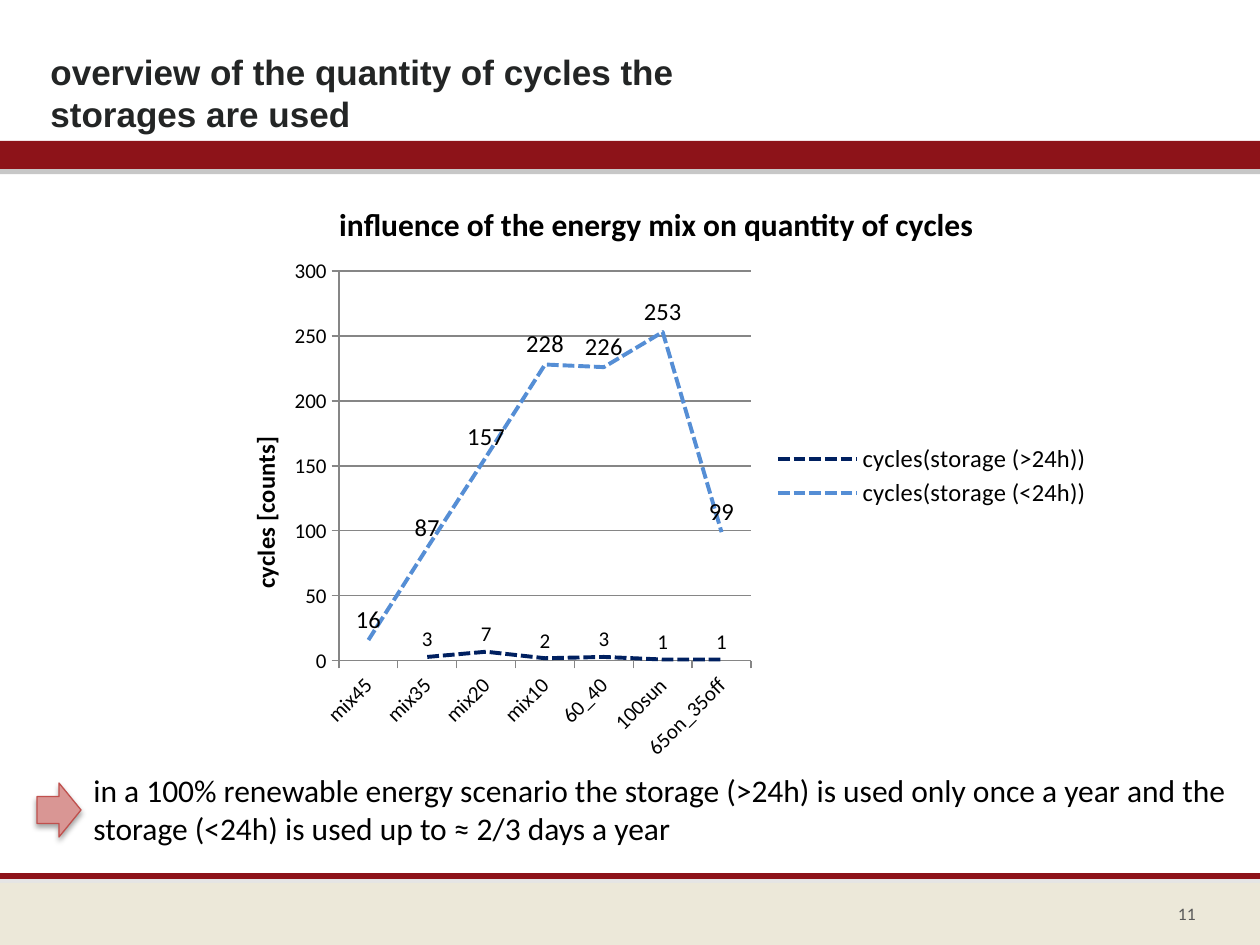
from dataclasses import dataclass

from lxml import etree
from pptx import Presentation
from pptx.chart.data import CategoryChartData
from pptx.dml.color import RGBColor
from pptx.enum.chart import XL_CHART_TYPE, XL_LABEL_POSITION, XL_LEGEND_POSITION, XL_MARKER_STYLE, XL_TICK_MARK
from pptx.enum.dml import MSO_LINE
from pptx.enum.shapes import MSO_SHAPE
from pptx.enum.text import MSO_ANCHOR, PP_ALIGN
from pptx.oxml import parse_xml
from pptx.oxml.ns import nsdecls, qn
from pptx.util import Emu, Pt

PX = 914400 / 126

RECTANGLE, RIGHT_ARROW = MSO_SHAPE.RECTANGLE, MSO_SHAPE.RIGHT_ARROW
TOP, MIDDLE = MSO_ANCHOR.TOP, MSO_ANCHOR.MIDDLE
LEFT, RIGHT = PP_ALIGN.LEFT, PP_ALIGN.RIGHT
OUTSIDE = XL_TICK_MARK.OUTSIDE

BLACK = RGBColor(0x00, 0x00, 0x00)
TITLE_INK = RGBColor(0x23, 0x25, 0x25)
NUMBER_GREY = RGBColor(0x59, 0x59, 0x59)
AXIS_GREY = RGBColor(0x86, 0x86, 0x86)
SHADOW_GREY = RGBColor(0x80, 0x80, 0x80)
RED = RGBColor(0x8D, 0x13, 0x19)
BEIGE = RGBColor(0xEC, 0xE8, 0xD9)
PINK = RGBColor(0xD9, 0x96, 0x94)
ARROW_EDGE = RGBColor(0xC0, 0x50, 0x4D)
NAVY = RGBColor(0x00, 0x20, 0x60)
BLUE = RGBColor(0x55, 0x8E, 0xD5)


@dataclass(frozen=True)
class Box:
    left: int
    top: int
    width: int
    height: int

    def emu(self) -> tuple[Emu, ...]:
        return tuple(Emu(round(length * PX)) for length in (self.left, self.top, self.width, self.height))


@dataclass(frozen=True)
class Shadow:
    color: RGBColor
    opacity: int
    blur: float
    distance: float
    angle: int


@dataclass(frozen=True)
class Block:
    box: Box
    fill: RGBColor
    shadow: Shadow | None = None
    preset: int = RECTANGLE
    edge: RGBColor | None = None


@dataclass(frozen=True)
class Label:
    box: Box
    lines: tuple[str, ...]
    size: int
    color: RGBColor = BLACK
    font: str = "Calibri"
    bold: bool = False
    align: int = LEFT
    anchor: int = MIDDLE
    wrap: bool = True


@dataclass(frozen=True)
class Series:
    name: str
    values: tuple[int | None, ...]
    color: RGBColor
    label_size: int


BLOCKS = (
    Block(Box(0, 883, 1260, 62), BEIGE, Shadow(SHADOW_GREY, 20, 0, 3, 270)),
    Block(Box(0, 873, 1260, 6), RED),
    Block(Box(0, 141, 1260, 28), RED, Shadow(SHADOW_GREY, 43, 0, 3, 90)),
    Block(Box(37, 783, 44, 54), PINK, Shadow(BLACK, 35, 3.1, 1.8, 90), RIGHT_ARROW, ARROW_EDGE),
)
LABELS = (
    Label(Box(38, 27, 727, 131), ("overview of the quantity of cycles the storages are used",),
          20, TITLE_INK, "Arial", bold=True),
    Label(Box(81, 765, 1173, 89),
          ("in a 100% renewable energy scenario the storage (>24h) is used only once a year and the",
           "storage (<24h) is used up to ≈ 2/3 days a year"), 18, anchor=TOP, wrap=False),
    Label(Box(1071, 857, 137, 113), ("11",), 10, NUMBER_GREY, align=RIGHT),
)
CHART_BOX = Box(210, 178, 893, 595)
PLOT_BOX = Box(339, 271, 412, 390)
LEGEND_BOX = Box(772, 440, 320, 72)
AXIS_TITLE_BOX = Box(244, 432, 26, 156)
CATEGORIES = ("mix45", "mix35", "mix20", "mix10", "60_40", "100sun", "65on_35off")
SERIES = (
    Series("cycles(storage (>24h))", (None, 3, 7, 2, 3, 1, 1), NAVY, 12),
    Series("cycles(storage (<24h))", (16, 87, 157, 228, 226, 253, 99), BLUE, 14),
)


def add_shadow(shape, shadow: Shadow) -> None:
    shape._element.spPr.append(parse_xml(
        f'<a:effectLst {nsdecls("a")}><a:outerShdw blurRad="{Pt(shadow.blur)}" dist="{Pt(shadow.distance)}"'
        f' dir="{shadow.angle * 60000}" algn="ctr" rotWithShape="0"><a:srgbClr val="{shadow.color}">'
        f'<a:alpha val="{shadow.opacity * 1000}"/></a:srgbClr></a:outerShdw></a:effectLst>'))


def add_block(slide, block: Block) -> None:
    shape = slide.shapes.add_shape(block.preset, *block.box.emu())
    shape.fill.solid()
    shape.fill.fore_color.rgb = block.fill
    if block.edge is None:
        shape.line.fill.background()
    else:
        shape.line.color.rgb = block.edge
        shape.line.width = Pt(0.75)
    if block.shadow is None:
        shape.shadow.inherit = False
    else:
        add_shadow(shape, block.shadow)


def set_font(font, size: int, color: RGBColor = BLACK, name: str = "Calibri", bold: bool = False) -> None:
    font.size, font.name, font.bold = Pt(size), name, bold
    font.color.rgb = color


def add_label(slide, label: Label) -> None:
    frame = slide.shapes.add_textbox(*label.box.emu()).text_frame
    frame.word_wrap = label.wrap
    frame.vertical_anchor = label.anchor
    frame.text = "\n".join(label.lines)
    for paragraph in frame.paragraphs:
        paragraph.alignment = label.align
        set_font(paragraph.font, label.size, label.color, label.font, label.bold)


def place(element, box: Box, after: str | None, inner: bool = False, sized: bool = True) -> None:
    """Give a chart part a manual layout from its box on the slide."""
    for old in element.findall(qn("c:layout")):
        element.remove(old)
    layout = etree.Element(qn("c:layout"))
    manual = etree.SubElement(layout, qn("c:manualLayout"))
    settings = [("layoutTarget", "inner")] if inner else []
    settings += [("xMode", "edge"), ("yMode", "edge"),
                 ("x", (box.left - CHART_BOX.left) / CHART_BOX.width),
                 ("y", (box.top - CHART_BOX.top) / CHART_BOX.height)]
    if sized:
        settings += [("w", box.width / CHART_BOX.width), ("h", box.height / CHART_BOX.height)]
    for tag, value in settings:
        text = value if isinstance(value, str) else f"{value:.4f}"
        etree.SubElement(manual, qn(f"c:{tag}")).set("val", text)
    if after is None:
        element.insert(0, layout)
    else:
        element.find(qn(after)).addnext(layout)


def set_title(owner, text: str, size: int) -> None:
    frame = owner.text_frame
    frame.text = text
    set_font(frame.paragraphs[0].font, size, bold=True)


def style_series(plot_series, series: Series) -> None:
    plot_series.smooth = False
    plot_series.marker.style = XL_MARKER_STYLE.NONE
    line = plot_series.format.line
    line.color.rgb = series.color
    line.width = Pt(2.25)
    line.dash_style = MSO_LINE.SQUARE_DOT
    labels = plot_series.data_labels
    labels.show_value = True
    labels.position = XL_LABEL_POSITION.ABOVE
    labels.number_format, labels.number_format_is_linked = "0", False
    set_font(labels.font, series.label_size)


def add_cycles_chart(slide) -> None:
    data = CategoryChartData(number_format="0")
    data.categories = CATEGORIES
    for series in SERIES:
        data.add_series(series.name, series.values)
    chart = slide.shapes.add_chart(XL_CHART_TYPE.LINE, *CHART_BOX.emu(), data).chart
    set_font(chart.font, 10)
    set_title(chart.chart_title, "influence of the energy mix on quantity of cycles", 18)
    chart.has_legend = True
    chart.legend.position = XL_LEGEND_POSITION.RIGHT
    chart.legend.include_in_layout = False
    set_font(chart.legend.font, 14)

    category_axis, value_axis = chart.category_axis, chart.value_axis
    for axis in (category_axis, value_axis):
        axis.major_tick_mark = OUTSIDE
        axis.format.line.color.rgb = AXIS_GREY
        set_font(axis.tick_labels.font, 12)
    category_axis.tick_labels.font._element.getparent().getparent().getparent().find(
        qn("a:bodyPr")).set("rot", str(-45 * 60000))
    value_axis.minimum_scale, value_axis.maximum_scale, value_axis.major_unit = 0, 300, 50
    value_axis.major_gridlines.format.line.color.rgb = AXIS_GREY
    set_title(value_axis.axis_title, "cycles [counts]", 14)
    value_axis.axis_title.text_frame._txBody.find(qn("a:bodyPr")).set("rot", str(-90 * 60000))

    plot = chart.plots[0]
    plot.vary_by_categories = False
    for plot_series, series in zip(plot.series, SERIES):
        style_series(plot_series, series)
    place(plot._element.getparent(), PLOT_BOX, None, inner=True)
    place(chart.legend._element, LEGEND_BOX, "c:legendPos")
    place(value_axis.axis_title._element, AXIS_TITLE_BOX, "c:tx", sized=False)


def main() -> None:
    presentation = Presentation()
    _, _, presentation.slide_width, presentation.slide_height = Box(0, 0, 1260, 945).emu()
    slide = presentation.slides.add_slide(presentation.slide_layouts[6])
    for block in BLOCKS:
        add_block(slide, block)
    add_cycles_chart(slide)
    for label in LABELS:
        add_label(slide, label)
    presentation.save("out.pptx")


if __name__ == "__main__":
    main()
